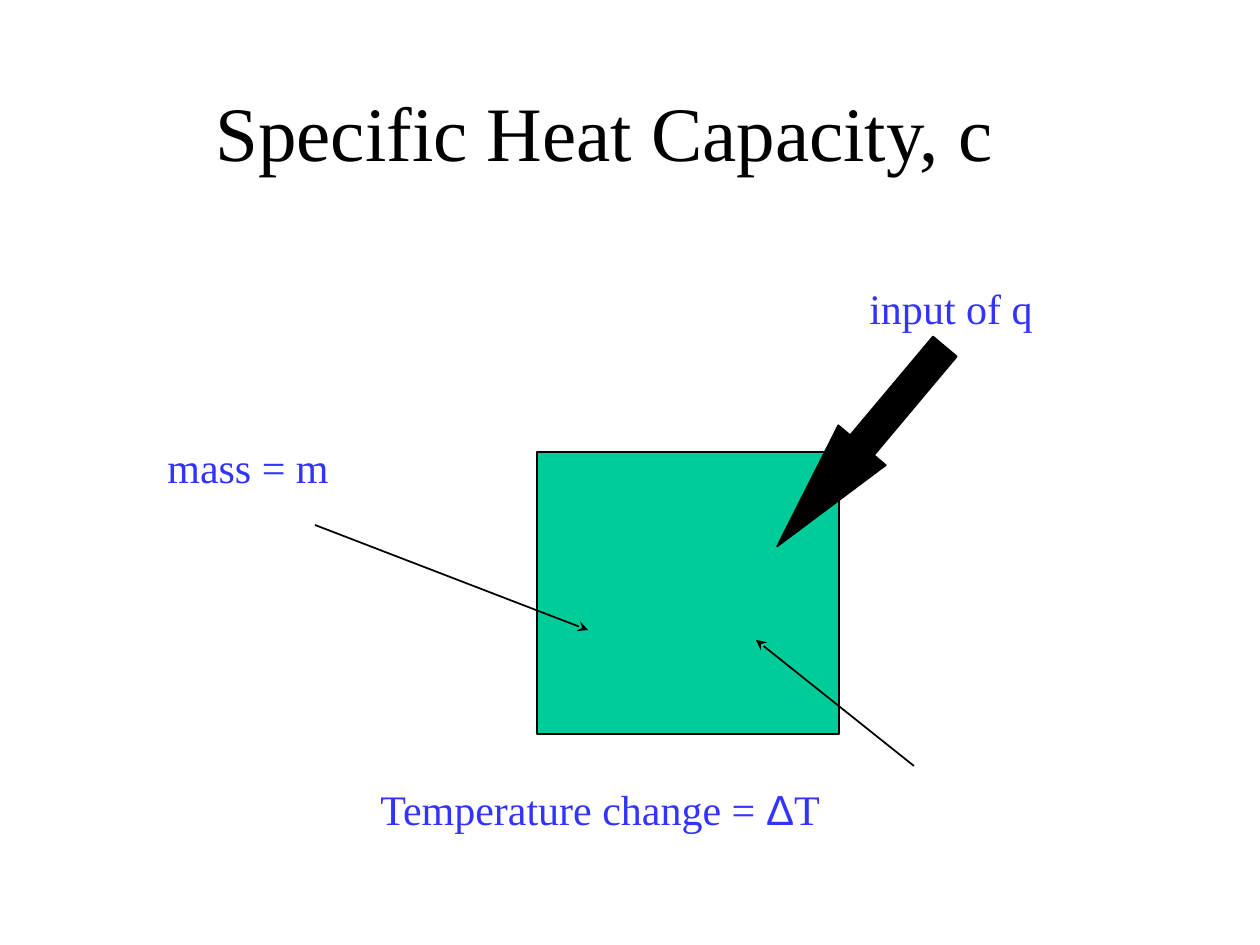
from lxml.etree import SubElement
from pptx import Presentation
from pptx.dml.color import RGBColor
from pptx.enum.shapes import MSO_CONNECTOR, MSO_SHAPE
from pptx.enum.text import MSO_ANCHOR, PP_ALIGN
from pptx.oxml.ns import qn
from pptx.util import Emu, Pt

PX_PER_INCH = 126
BLACK = "000000"
GREEN = "00CC99"
BLUE = "3333FF"
SERIF = "Times New Roman"
SANS = "Arial"
LABEL_HEIGHT = 97


def px(length):
    return Emu(round(length * 914400 / PX_PER_INCH))


def color(hex_value):
    return RGBColor.from_string(hex_value)


def add_text(page, bounds, spans, size, text_color, align=PP_ALIGN.LEFT, anchor=MSO_ANCHOR.TOP):
    """Add one paragraph made of (text, font name) spans."""
    box = page.shapes.add_textbox(*map(px, bounds))
    frame = box.text_frame
    frame.word_wrap = True
    frame.vertical_anchor = anchor
    para = frame.paragraphs[0]
    para.alignment = align
    para.font.size = Pt(size)
    para.font.color.rgb = color(text_color)
    for text, font_name in spans:
        span = para.add_run()
        span.text = text
        span.font.name = font_name


def add_label(page, left, top, width, *spans):
    add_text(page, (left, top, width, LABEL_HEIGHT), spans, 24, BLUE)


def add_solid(page, preset, bounds, fill):
    shape = page.shapes.add_shape(preset, *map(px, bounds))
    shape.shadow.inherit = False
    shape.fill.solid()
    shape.fill.fore_color.rgb = color(fill)
    shape.line.color.rgb = color(BLACK)
    shape.line.width = Pt(1)
    return shape


def add_pointer(page, start, end):
    """Add a thin line with a stealth arrowhead at its end."""
    pointer = page.shapes.add_connector(MSO_CONNECTOR.STRAIGHT, *map(px, start + end))
    pointer.line.color.rgb = color(BLACK)
    pointer.line.width = Pt(1)
    SubElement(pointer.line._get_or_add_ln(), qn("a:tailEnd"), type="stealth")
    SubElement(pointer._element.spPr, qn("a:effectLst"))


def main():
    deck = Presentation()
    deck.slide_width, deck.slide_height = px(1260), px(945)
    page = deck.slides.add_slide(deck.slide_layouts[6])

    add_text(page, (69, 29, 1071, 203), [("Specific Heat Capacity, c", SERIF)],
             44, BLACK, PP_ALIGN.CENTER, MSO_ANCHOR.MIDDLE)
    add_solid(page, MSO_SHAPE.RECTANGLE, (537, 452, 302, 282), GREEN)

    add_label(page, 368, 777, 840,
              ("Temperature change = ", SERIF), ("Δ", SANS), ("T", SERIF))
    add_pointer(page, (914, 766), (756, 640))

    heat_arrow = add_solid(page, MSO_SHAPE.DOWN_ARROW, (830, 316, 62, 261), BLACK)
    heat_arrow.rotation = 40
    heat_arrow.adjustments[0] = 0.5
    heat_arrow.adjustments[1] = 2.13

    add_label(page, 155, 435, 330, ("mass = m", SERIF))
    add_pointer(page, (315, 525), (588, 630))
    add_label(page, 857, 276, 314, ("input of q", SERIF))

    deck.save("out.pptx")


if __name__ == "__main__":
    main()
